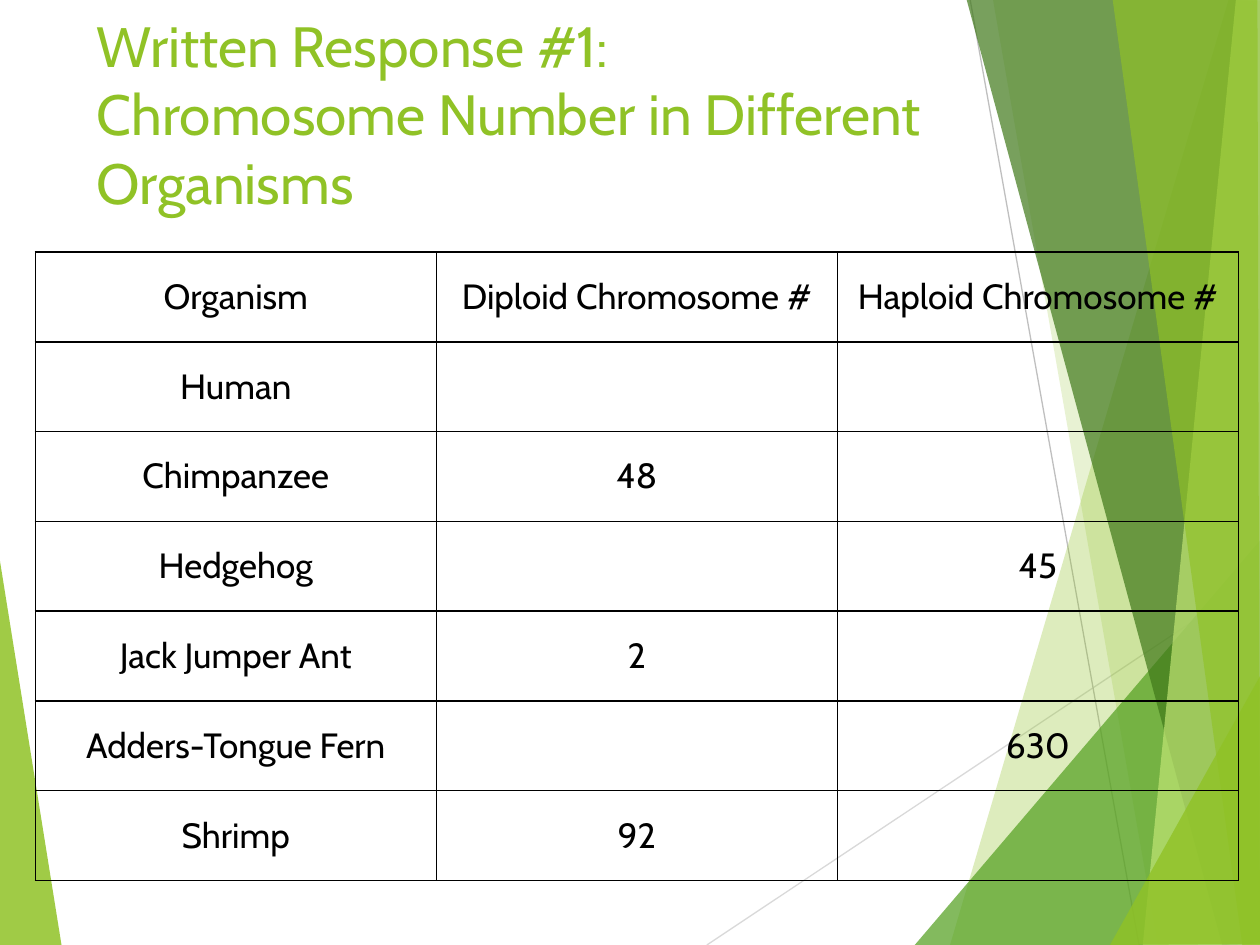
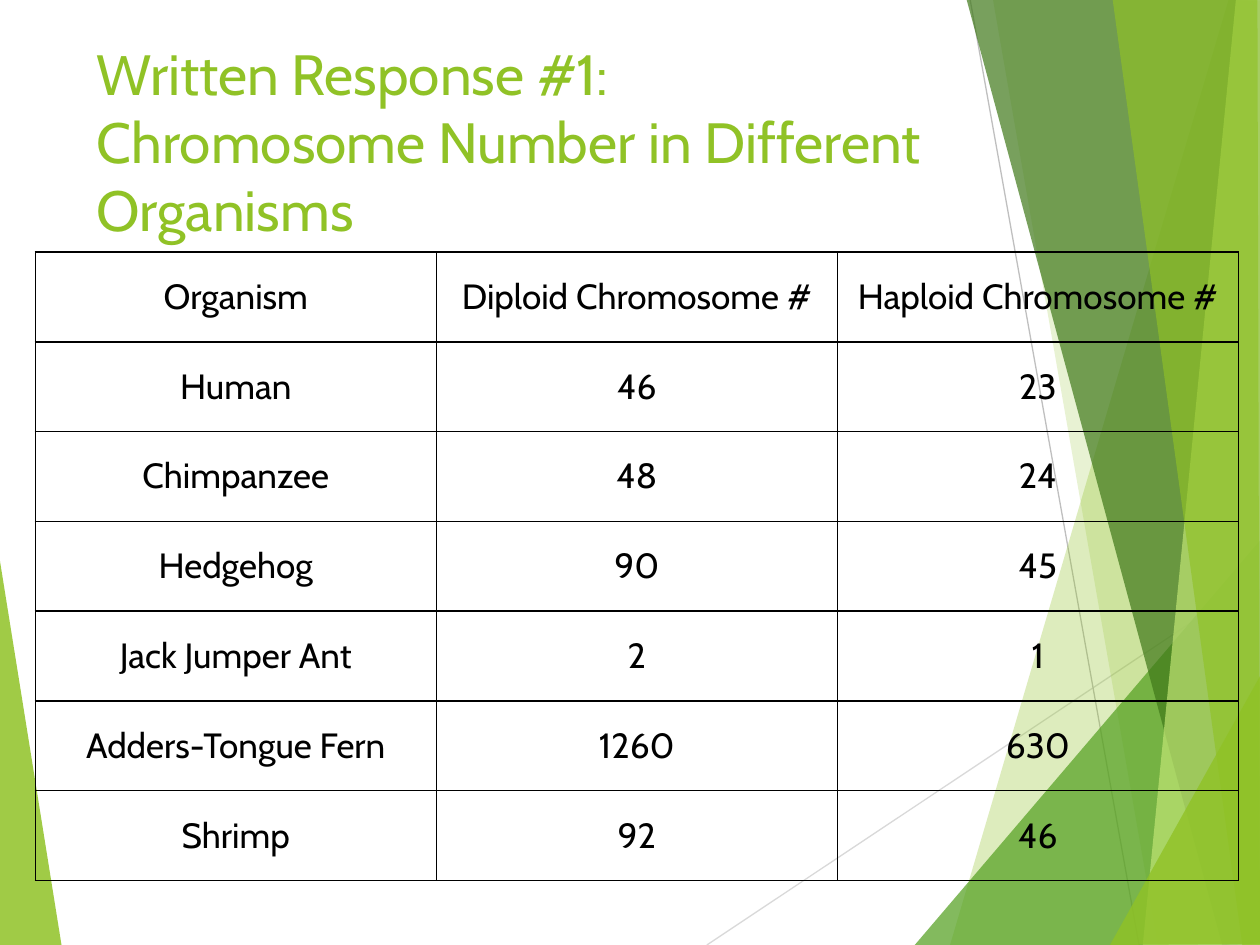
from dataclasses import dataclass

from lxml import etree
from pptx import Presentation
from pptx.dml.color import RGBColor
from pptx.enum import shapes, text
from pptx.oxml import ns
from pptx.util import Inches, Pt


@dataclass(frozen=True)
class Theme:
    font: str = "Cabin"
    green: str = "90C226"
    mid_green: str = "54A021"
    dark_green: str = "3F7819"
    pale_green: str = "C0E474"
    ink: str = "000000"
    light_gray: str = "D9D9D9"
    gray: str = "BFBFBF"
    title_size: float = 32.4
    cell_size: float = 20
    ray_width: float = 0.75
    border_width: float = 1


T = Theme()

TITLE = "Written Response #1:\vChromosome Number in Different Organisms"
HEADER = ("Organism", "Diploid Chromosome #", "Haploid Chromosome #")
# organism, diploid number, column given in the question
ORGANISMS = [
    ("Human", 46, None),
    ("Chimpanzee", 48, "diploid"),
    ("Hedgehog", 90, "haploid"),
    ("Jack Jumper Ant", 2, "diploid"),
    ("Adders-Tongue Fern", 1260, "haploid"),
    ("Shrimp", 92, "diploid"),
]
# title top, whether every number is shown
SLIDES = [(0.04, False), (0.26, True)]

# Bands: colour, opacity in percent, corners
LEFT_BAND = (T.green, 85, [(-0.01, 4.39), (0.49, 7.51), (-0.01, 7.5)])
RIGHT_BANDS = [
    (T.green, 30, [(9.75, 0), (7.54, 7.5), (10.02, 7.51), (10.01, 0.01)]),
    (T.green, 20, [(7.88, -0.01), (9.19, 7.5), (10.01, 7.5), (10.01, -0.01)]),
    (T.mid_green, 72, [(7.26, 7.5), (10, 4.29), (10.01, 7.5)]),
    (T.dark_green, 70, [(7.67, -0.01), (9.7, 7.5), (10.01, 7.49), (10.01, -0.01)]),
    (T.pale_green, 70, [(9.81, -0.01), (9.07, 7.5), (10.01, 7.5), (10, -0.01)]),
    (T.green, 65, [(8.83, -0.01), (9.86, 7.5), (10, 7.5), (9.98, -0.01)]),
    (T.green, 80, [(8.81, 7.5), (10.01, 5.35), (10.01, 7.49)]),
]
# Rays: colour, start, end
RAYS = [
    (T.light_gray, (5.61, 7.5), (10.01, 4.57)),
    (T.gray, (7.7, 0), (9.04, 7.5)),
]


def rgb(color):
    return RGBColor.from_string(color)


def write(tf, content, *, size, color, align=text.PP_ALIGN.LEFT):
    p = tf.paragraphs[0]
    p.text = content
    p.alignment = align
    for r in p.runs:
        r.font.name = T.font
        r.font.size = Pt(size)
        r.font.color.rgb = rgb(color)


def add_band(slide, color, opacity, corners):
    points = [(Inches(x), Inches(y)) for x, y in corners]
    builder = slide.shapes.build_freeform(*points[0])
    builder.add_line_segments(points[1:], close=True)
    sp = builder.convert_to_shape()
    sp.shadow.inherit = False
    sp.line.fill.background()
    sp.fill.solid()
    sp.fill.fore_color.rgb = rgb(color)
    clr = sp._element.spPr.find(".//" + ns.qn("a:srgbClr"))
    etree.SubElement(clr, ns.qn("a:alpha"), val=str(opacity * 1000))


def add_ray(slide, color, start, end):
    ends = [Inches(v) for v in (*start, *end)]
    ray = slide.shapes.add_connector(shapes.MSO_CONNECTOR.STRAIGHT, *ends)
    ray.line.color.rgb = rgb(color)
    ray.line.width = Pt(T.ray_width)
    etree.SubElement(ray._element.spPr, ns.qn("a:effectLst"))


def add_backdrop(slide):
    add_band(slide, *LEFT_BAND)
    for ray in RAYS:
        add_ray(slide, *ray)
    for band in RIGHT_BANDS:
        add_band(slide, *band)


def add_title(slide, top):
    box = slide.shapes.add_textbox(Inches(0.67), Inches(top), Inches(6.94), Inches(1.44))
    tf = box.text_frame
    tf.word_wrap = True
    write(tf, TITLE, size=T.title_size, color=T.green)


def set_borders(cell):
    tc_pr = cell._tc.get_or_add_tcPr()
    for i, side in enumerate(("lnL", "lnR", "lnT", "lnB")):
        ln = etree.Element(ns.qn("a:" + side), w=str(Pt(T.border_width)))
        fill = etree.SubElement(ln, ns.qn("a:solidFill"))
        etree.SubElement(fill, ns.qn("a:srgbClr"), val=T.ink)
        tc_pr.insert(i, ln)


def chromosome_rows(answered):
    """Header and body rows; a haploid number is half the diploid one."""
    rows = [HEADER]
    for name, diploid, given in ORGANISMS:
        numbers = {"diploid": diploid, "haploid": diploid // 2}
        rows.append((name, *(str(n) if answered or kind == given else ""
                             for kind, n in numbers.items())))
    return rows


def add_chromosome_table(slide, rows):
    table = slide.shapes.add_table(len(rows), len(HEADER), Inches(0.28), Inches(2),
                                   Inches(9.55), Inches(4.99)).table
    table.first_row = table.horz_banding = False
    for row, values in enumerate(rows):
        for col, value in enumerate(values):
            cell = table.cell(row, col)
            cell.fill.background()
            cell.vertical_anchor = text.MSO_ANCHOR.MIDDLE
            set_borders(cell)
            if value:
                write(cell.text_frame, value, size=T.cell_size, color=T.ink,
                      align=text.PP_ALIGN.CENTER)


def main():
    prs = Presentation()
    prs.slide_width, prs.slide_height = Inches(10), Inches(7.5)
    for title_top, answered in SLIDES:
        slide = prs.slides.add_slide(prs.slide_layouts[6])
        add_backdrop(slide)
        add_title(slide, title_top)
        add_chromosome_table(slide, chromosome_rows(answered))
    prs.save("out.pptx")


if __name__ == "__main__":
    main()
